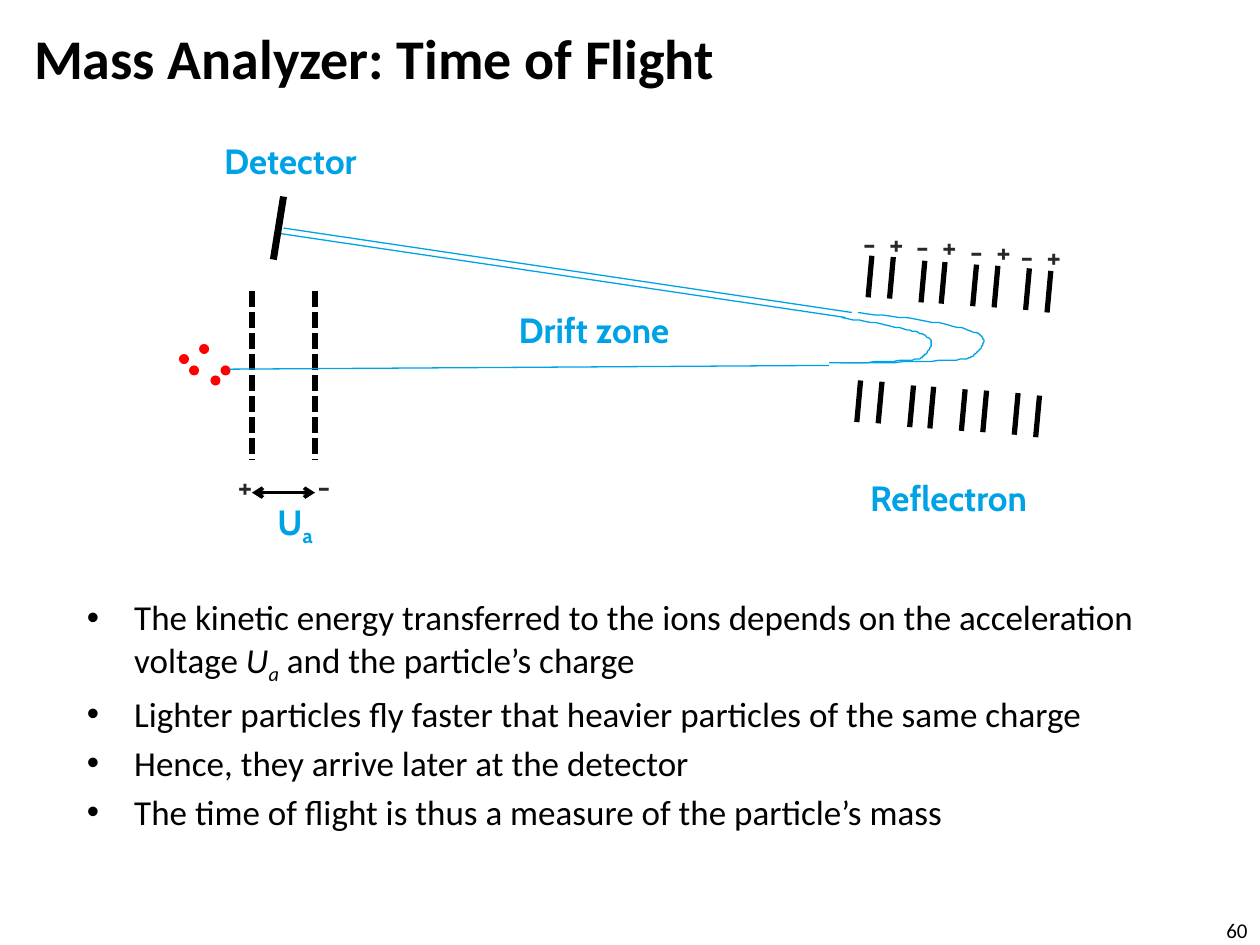
"""Build a slide that explains the time-of-flight mass analyzer."""
from dataclasses import dataclass, field
from typing import Any, NamedTuple

from lxml.etree import SubElement
from pptx import Presentation
from pptx.dml.color import RGBColor
from pptx.enum.dml import MSO_LINE
from pptx.enum.shapes import MSO_CONNECTOR, MSO_SHAPE
from pptx.enum.text import MSO_ANCHOR as Anchor
from pptx.enum.text import MSO_AUTO_SIZE as AutoSize
from pptx.enum.text import PP_ALIGN as Align
from pptx.oxml.ns import qn
from pptx.util import Emu, Pt

EMU_PER_PX = 9144
COLORS = {"black": "000000", "ion": "FF0000", "beam": "00A2E6", "sign": "282828"}
HEADING = {"size": Pt(32), "name": "Calibri", "bold": True}
BODY = {"size": Pt(20), "name": "Calibri", "bold": False}
LABEL = {"size": Pt(20), "name": "Cabin", "bold": True}
SIGN = {"size": Pt(18), "name": "Cabin", "bold": True}
NUMBER = {"size": Pt(12), "name": "Calibri", "bold": False}


class Box(NamedTuple):
    left: int
    top: int
    width: int
    height: int


class Point(NamedTuple):
    x: float
    y: float


class Span(NamedTuple):
    text: str
    italic: bool = False
    subscript: bool = False


@dataclass
class Line:
    start: Point
    end: Point
    color: str = "black"
    weight: float = 3
    dash: Any = None
    arrows: bool = False


@dataclass
class Label:
    box: Box
    spans: list[Span]
    color: str = "beam"
    style: dict[str, Any] = field(default_factory=lambda: LABEL)


def px(length: float) -> Emu:
    return Emu(round(length * EMU_PER_PX))


def rgb(name: str) -> RGBColor:
    return RGBColor.from_string(COLORS[name])


def apply(target: Any, values: dict[str, Any]) -> None:
    for name, value in values.items():
        setattr(target, name, value)


def place(shape: Any, box: Box) -> None:
    apply(shape, {name: px(value) for name, value in box._asdict().items()})


def write(para: Any, spans: list[Span], style: dict[str, Any], color: str) -> None:
    for span in spans:
        run = para.add_run()
        run.text = span.text
        apply(run.font, style)
        run.font.italic = span.italic
        run.font.color.rgb = rgb(color)
        if span.subscript:
            run._r.get_or_add_rPr().set("baseline", "-25000")


def draw_line(slide: Any, line: Line) -> None:
    shape = slide.shapes.add_connector(
        MSO_CONNECTOR.STRAIGHT, *map(px, (*line.start, *line.end)))
    shape.line.color.rgb = rgb(line.color)
    apply(shape.line, {"width": Pt(line.weight), "dash_style": line.dash})
    if line.arrows:
        for tag in ("a:headEnd", "a:tailEnd"):
            SubElement(shape.line._get_or_add_ln(), qn(tag), type="arrow")
    SubElement(shape._element.spPr, qn("a:effectLst"))


def draw_label(slide: Any, label: Label) -> None:
    frame = slide.shapes.add_textbox(*map(px, label.box)).text_frame
    apply(frame, {"word_wrap": False, "auto_size": AutoSize.SHAPE_TO_FIT_TEXT})
    para = frame.paragraphs[0]
    para.alignment = Align.RIGHT
    write(para, label.spans, label.style, label.color)


def draw_ion(slide: Any, corner: Point) -> None:
    ion = slide.shapes.add_shape(MSO_SHAPE.OVAL, *map(px, (*corner, 8, 8)))
    ion.shadow.inherit = False
    ion.fill.solid()
    ion.fill.fore_color.rgb = rgb("ion")
    ion.line.fill.background()


def bezier(a: Point, b: Point, c: Point, d: Point, t: float) -> Point:
    weights = ((1 - t) ** 3, 3 * t * (1 - t) ** 2, 3 * t * t * (1 - t), t ** 3)
    return Point(*(sum(w * v for w, v in zip(weights, axis)) for axis in zip(a, b, c, d)))


def draw_curve(slide: Any, knots: list[Point], steps: int = 12) -> None:
    points = [bezier(*knots[i:i + 4], step / steps)
              for i in range(0, len(knots) - 1, 3) for step in range(1, steps + 1)]
    builder = slide.shapes.build_freeform(*knots[0], scale=EMU_PER_PX)
    builder.add_line_segments(points, close=False)
    curve = builder.convert_to_shape()
    curve.shadow.inherit = False
    curve.fill.background()
    curve.line.color.rgb = rgb("beam")
    curve.line.width = Pt(0.75)


def draw_reflectron(slide: Any) -> None:
    for pair in range(4):
        for side in range(2):
            unit = 5 * pair + 2 * side
            top = Point(692 + round(unit * 25 / 3), 203 + round(unit * 0.7))
            for x, y in (top, (top.x - 9, top.y + 99)):
                draw_line(slide, Line(Point(x, y), Point(x - 3, y + 33)))


def sign_pair(left: int, top: int) -> list[Label]:
    return [Label(Box(left + 17, top, 35, 40), [Span("+")], "sign", SIGN),
            Label(Box(left, top, 29, 40), [Span("-")], "sign", SIGN)]


IONS = [Point(158, 273), Point(175, 290), Point(142, 281), Point(167, 298), Point(150, 290)]
LINES = [
    *(Line(Point(x, 231), Point(x, 365), dash=MSO_LINE.SQUARE_DOT) for x in (200, 250)),
    Line(Point(182, 293), Point(658, 290), "beam", 0.75),
    Line(Point(200, 391), Point(250, 391), weight=2, arrows=True),
    *(Line(Point(x, y), Point(x + 451, y + 67), "beam", 0.75)
      for x, y in ((220, 185), (225, 181))),
    Line(Point(225, 156), Point(217, 206), weight=4),
]
CURVES = [
    [(658, 288), (683, 288), (708, 287), (721, 286), (734, 285), (732, 283), (735, 281),
     (738, 278), (741, 272), (738, 269), (735, 266), (728, 263), (717, 261),
     (705, 258), (687, 255), (668, 252)],
    [(667, 288), (702, 288), (737, 287), (755, 286), (773, 285), (771, 283), (775, 280),
     (779, 277), (783, 271), (779, 267), (775, 263), (765, 261), (749, 257),
     (733, 254), (707, 251), (681, 248)],
]
LABELS = [
    Label(Box(667, 373, 158, 44), [Span("Reflectron")]),
    Label(Box(389, 240, 152, 44), [Span("Drift zone")]),
    Label(Box(158, 106, 135, 44), [Span("Detector")]),
    Label(Box(209, 392, 49, 44), [Span("U"), Span("a", subscript=True)]),
    Label(Box(175, 366, 35, 40), [Span("+")], "sign", SIGN),
    Label(Box(242, 366, 29, 40), [Span("-")], "sign", SIGN),
]
SIGN_CORNERS = [Point(675, 173), Point(717, 175), Point(760, 179), Point(800, 183)]
BULLETS = [
    [Span("The kinetic energy transferred to the ions depends on the acceleration voltage "),
     Span("U", italic=True), Span("a", italic=True, subscript=True),
     Span(" and the particle’s charge")],
    [Span("Lighter particles fly faster that heavier particles of the same charge")],
    [Span("Hence, they arrive later at the detector")],
    [Span("The time of flight is thus a measure of the particle’s mass")],
]


def fill_text(slide: Any) -> None:
    title, body = slide.placeholders
    place(title, Box(17, 8, 733, 75))
    apply(title.text_frame, {"auto_size": AutoSize.NONE, "vertical_anchor": Anchor.MIDDLE})
    heading = title.text_frame.paragraphs[0]
    heading.alignment = Align.LEFT
    write(heading, [Span("Mass Analyzer: Time of Flight")], HEADING, "black")
    place(body, Box(59, 468, 866, 240))
    frame = body.text_frame
    frame.auto_size = AutoSize.NONE
    for index, spans in enumerate(BULLETS):
        para = frame.add_paragraph() if index else frame.paragraphs[0]
        write(para, spans, BODY, "black")
    number = slide.shapes.add_textbox(*map(px, Box(750, 727, 250, 23))).text_frame
    apply(number, {"word_wrap": True, "vertical_anchor": Anchor.MIDDLE})
    number.paragraphs[0].alignment = Align.RIGHT
    write(number.paragraphs[0], [Span("60")], NUMBER, "black")


def main() -> None:
    deck = Presentation()
    apply(deck, {"slide_width": px(1000), "slide_height": px(750)})
    page = deck.slides.add_slide(deck.slide_layouts[1])
    fill_text(page)
    for ion in IONS:
        draw_ion(page, ion)
    for line in LINES:
        draw_line(page, line)
    draw_reflectron(page)
    for knots in CURVES:
        draw_curve(page, [Point(*knot) for knot in knots])
    for label in LABELS + [sign for corner in SIGN_CORNERS for sign in sign_pair(*corner)]:
        draw_label(page, label)
    deck.save("out.pptx")


if __name__ == "__main__":
    main()
